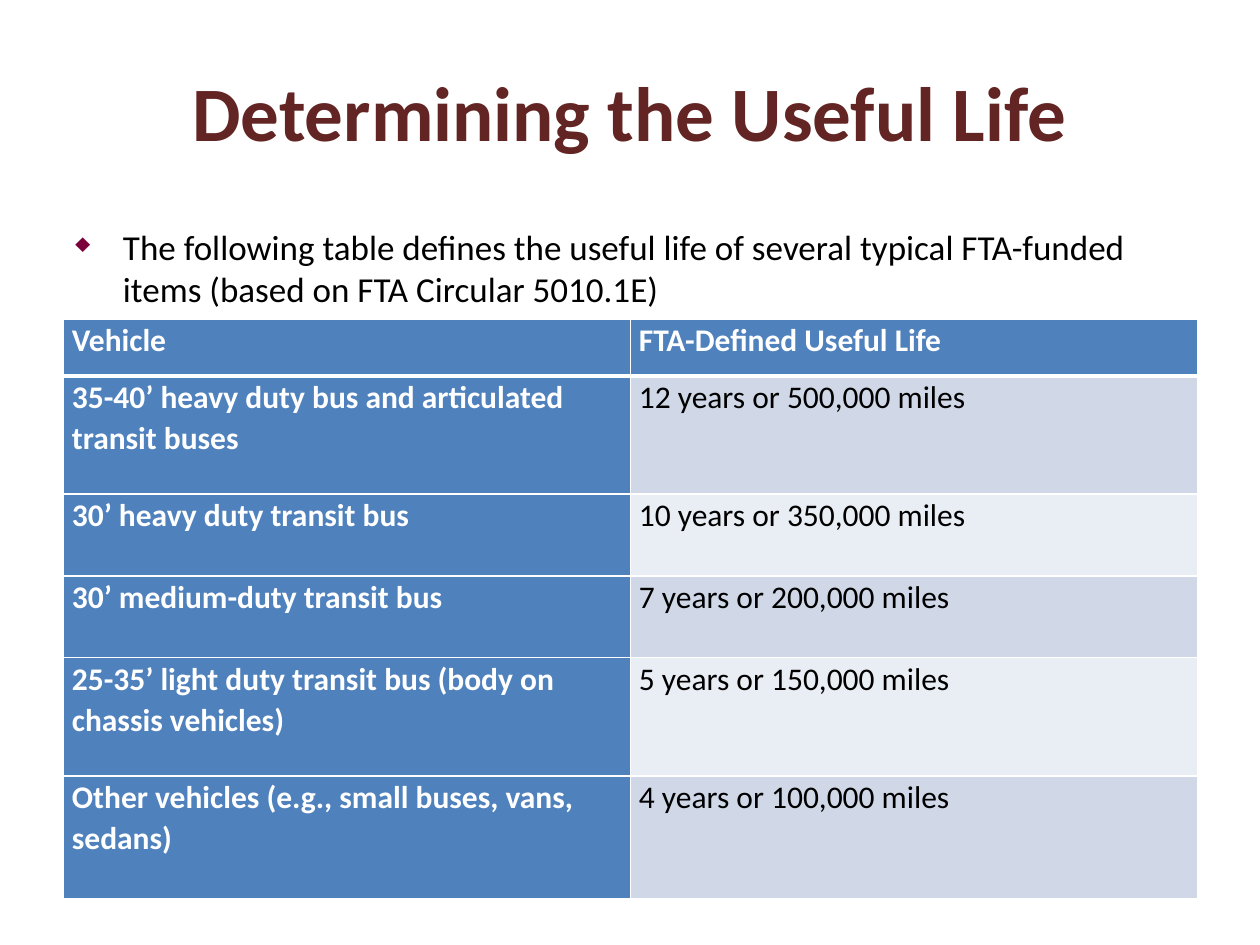
from dataclasses import dataclass

from lxml import etree
from pptx import Presentation
from pptx.dml.color import RGBColor
from pptx.enum.text import MSO_ANCHOR, PP_ALIGN
from pptx.oxml.ns import qn
from pptx.util import Cm, Pt

CENTER, LEFT = PP_ALIGN.CENTER, PP_ALIGN.LEFT
MIDDLE, TOP = MSO_ANCHOR.MIDDLE, MSO_ANCHOR.TOP
TITLE_ONLY = 5


@dataclass(frozen=True)
class Theme:
    font: str = "Calibri"
    title_size: int = 44
    body_size: int = 20
    table_size: int = 18
    title: str = "632523"
    text: str = "000000"
    white: str = "FFFFFF"
    bullet: str = "790039"
    header: str = "4F81BD"
    bands: tuple[str, str] = ("D0D8E8", "E9EDF4")


@dataclass(frozen=True)
class TableRow:
    vehicle: str
    useful_life: str
    height: float  # centimetres


THEME = Theme()
ROWS = [
    TableRow("Vehicle", "FTA-Defined Useful Life", 1.15),
    TableRow("35-40’ heavy duty bus and articulated transit buses", "12 years or 500,000 miles", 2.38),
    TableRow("30’ heavy duty transit bus", "10 years or 350,000 miles", 1.65),
    TableRow("30’ medium-duty transit bus", "7 years or 200,000 miles", 1.65),
    TableRow("25-35’ light duty transit bus (body on chassis vehicles)", "5 years or 150,000 miles", 2.38),
    TableRow("Other vehicles (e.g., small buses, vans, sedans)", "4 years or 100,000 miles", 2.48),
]


def write_text(text_frame, text: str, *, size: int, color: str, bold: bool = False,
               align=LEFT, anchor=TOP, line_spacing: float = 1.0, bullet: str = "") -> None:
    """Fill a text frame with one formatted paragraph."""
    text_frame.word_wrap = True
    text_frame.vertical_anchor = anchor
    paragraph = text_frame.paragraphs[0]
    paragraph.alignment = align
    paragraph.line_spacing = line_spacing
    if bullet:
        add_bullet(paragraph, bullet)
    run = paragraph.add_run()
    run.text = text
    run.font.name = THEME.font
    run.font.size = Pt(size)
    run.font.bold = bold
    run.font.color.rgb = RGBColor.from_string(color)


def add_bullet(paragraph, character: str) -> None:
    """Give a paragraph a coloured bullet and a hanging indent."""
    properties = paragraph._p.get_or_add_pPr()
    indent = Cm(0.96)
    properties.set("marL", str(indent))
    properties.set("indent", str(-indent))
    bullet_color = etree.SubElement(properties, qn("a:buClr"))
    etree.SubElement(bullet_color, qn("a:srgbClr"), val=THEME.bullet)
    etree.SubElement(properties, qn("a:buSzPct"), val="75000")
    etree.SubElement(properties, qn("a:buChar"), char=character)


def add_borders(cell, *, bottom: int = 1, top: int = 1) -> None:
    """Draw white lines, with widths in points, around a cell."""
    properties = cell._tc.get_or_add_tcPr()
    for side, width in (("L", 1), ("R", 1), ("T", top), ("B", bottom)):
        line = etree.SubElement(properties, qn(f"a:ln{side}"), w=str(Pt(width)))
        fill = etree.SubElement(line, qn("a:solidFill"))
        etree.SubElement(fill, qn("a:srgbClr"), val=THEME.white)


def add_useful_life_table(slide, rows: list[TableRow]) -> None:
    """Add the table with a header row, a header column and banded values."""
    height = sum(row.height for row in rows)
    table = slide.shapes.add_table(len(rows), 2, Cm(1.28), Cm(6.43), Cm(22.86), Cm(height)).table
    for row_index, row in enumerate(rows):
        table.rows[row_index].height = Cm(row.height)
        for column_index, text in enumerate((row.vehicle, row.useful_life)):
            cell = table.cell(row_index, column_index)
            is_header = row_index == 0 or column_index == 0
            cell.margin_left = cell.margin_right = Cm(0.17)
            cell.margin_top = cell.margin_bottom = 0
            add_borders(cell, bottom=3 if row_index == 0 else 1, top=3 if row_index == 1 else 1)
            cell.fill.solid()
            fill_color = THEME.header if is_header else THEME.bands[(row_index - 1) % 2]
            cell.fill.fore_color.rgb = RGBColor.from_string(fill_color)
            write_text(cell.text_frame, text, size=THEME.table_size, bold=is_header,
                       color=THEME.white if is_header else THEME.text, line_spacing=1.07)


def main() -> None:
    presentation = Presentation()
    presentation.slide_width, presentation.slide_height = Cm(25.4), Cm(19.05)
    slide = presentation.slides.add_slide(presentation.slide_layouts[TITLE_ONLY])

    # Title
    title = slide.shapes.title
    title.left, title.top, title.width, title.height = Cm(1.27), Cm(0.64), Cm(22.86), Cm(3.18)
    write_text(title.text_frame, "Determining the Useful Life", size=THEME.title_size,
               color=THEME.title, bold=True, align=CENTER, anchor=MIDDLE)

    # Introduction
    introduction = slide.shapes.add_textbox(Cm(1.27), Cm(4.42), Cm(22.86), Cm(2))
    write_text(introduction.text_frame,
               "The following table defines the useful life of several typical FTA-funded "
               "items (based on FTA Circular 5010.1E)",
               size=THEME.body_size, color=THEME.text, bullet="♦")

    # Useful life by vehicle
    add_useful_life_table(slide, ROWS)

    presentation.save("out.pptx")


if __name__ == "__main__":
    main()
